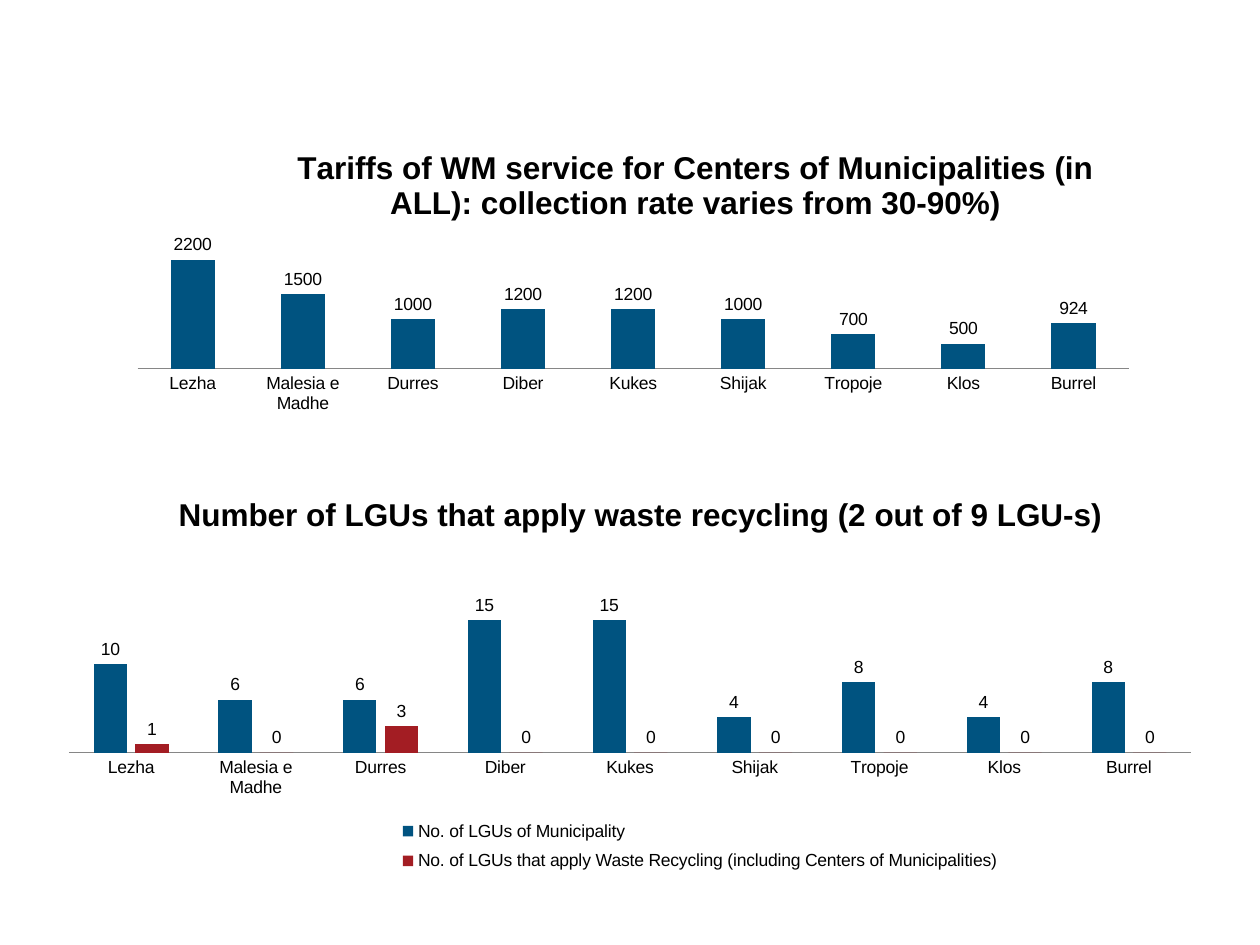
from lxml.etree import SubElement
from pptx import Presentation
from pptx.chart.data import CategoryChartData
from pptx.dml.color import RGBColor
from pptx.enum.chart import (XL_CHART_TYPE as ChartType, XL_LABEL_POSITION as LabelPos,
                             XL_LEGEND_POSITION as LegendPos, XL_TICK_MARK as Tick)
from pptx.oxml import parse_xml
from pptx.oxml.ns import nsdecls, qn
from pptx.util import Cm, Pt

# Content
COLORS = {"text": "000000", "axis": "868686", "blue": "005380", "red": "A31D23"}
FONT = "Arial"
MUNICIPALITIES = ["Lezha", "Malesia e Madhe", "Durres", "Diber", "Kukes",
                  "Shijak", "Tropoje", "Klos", "Burrel"]
PLOT = (0.021, 0.347, 0.959, 0.306)

TARIFFS = {
    "title": "Tariffs of WM service for Centers of Municipalities (in ALL): "
             "collection rate varies from 30-90%)",
    "box": (2.34, 2.11, 20.83, 8.15),
    "title_at": (0.17, 0.09),
    "top": 2500,
    "series": [("Series 1", "blue", [2200, 1500, 1000, 1200, 1200, 1000, 700, 500, 924])],
}
RECYCLING = {
    "title": "Number of LGUs that apply waste recycling (2 out of 9 LGU-s)",
    "box": (0.89, 9.09, 23.6, 9.32),
    "title_at": (0.11, 0.08),
    "top": 16,
    "series": [
        ("No. of LGUs of Municipality", "blue", [10, 6, 6, 15, 15, 4, 8, 4, 8]),
        ("No. of LGUs that apply Waste Recycling (including Centers of Municipalities)",
         "red", [1, 0, 3, 0, 0, 0, 0, 0, 0]),
    ],
    "legend": (0.28, 0.78, 0.56, 0.15),
}


def rgb(name):
    return RGBColor.from_string(COLORS[name])


def set_font(font, size, bold=False):
    font.name, font.size, font.bold = FONT, Pt(size), bold
    font.color.rgb = rgb("text")


def place(element, index, fractions, inner=False):
    """Give a chart part a manual layout in fractions of the chart."""
    for old in element.findall(qn("c:layout")):
        element.remove(old)
    layout = parse_xml(f"<c:layout {nsdecls('c')}><c:manualLayout/></c:layout>")
    settings = [("layoutTarget", "inner")] if inner else []
    settings += [("xMode", "edge"), ("yMode", "edge")]
    settings += zip("xywh", fractions)
    for tag, value in settings:
        SubElement(layout[0], qn(f"c:{tag}")).set("val", str(value))
    element.insert(index, layout)


def add_column_chart(slide, content):
    data = CategoryChartData()
    data.categories = MUNICIPALITIES
    for name, _, values in content["series"]:
        data.add_series(name, values)
    box = [Cm(length) for length in content["box"]]
    chart = slide.shapes.add_chart(ChartType.COLUMN_CLUSTERED, *box, data).chart
    set_font(chart.font, 10)

    # Title
    chart.has_title = True
    title = chart.chart_title
    title.include_in_layout = False
    title.text_frame.text = content["title"]
    set_font(title.text_frame.paragraphs[0].font, 18, bold=True)
    place(title._element, 1, content["title_at"])

    # Axes
    chart.category_axis.major_tick_mark = Tick.NONE
    chart.category_axis.format.line.color.rgb = rgb("axis")
    chart.category_axis.format.line.width = Pt(0.75)
    values_axis = chart.value_axis
    values_axis.visible = values_axis.has_major_gridlines = False
    values_axis.minimum_scale, values_axis.maximum_scale = 0, content["top"]

    # Columns and value labels
    plot = chart.plots[0]
    plot.gap_width, plot.overlap, plot.vary_by_categories = 150, -25, False
    for series, (_, color, _) in zip(plot.series, content["series"]):
        series.format.fill.solid()
        series.format.fill.fore_color.rgb = rgb(color)
        series.data_labels.show_value = True
        series.data_labels.position = LabelPos.OUTSIDE_END
        set_font(series.data_labels.font, 10)
    place(chart._chartSpace.chart.plotArea, 0, PLOT, inner=True)

    # Legend
    chart.has_legend = "legend" in content
    if chart.has_legend:
        chart.legend.position = LegendPos.TOP
        chart.legend.include_in_layout = False
        set_font(chart.legend.font, 10)
        place(chart.legend._element, 1, content["legend"])


def main():
    deck = Presentation()
    deck.slide_width, deck.slide_height = Cm(25.4), Cm(19.05)
    slide = deck.slides.add_slide(deck.slide_layouts[6])
    for content in (TARIFFS, RECYCLING):
        add_column_chart(slide, content)
    deck.save("out.pptx")


if __name__ == "__main__":
    main()
